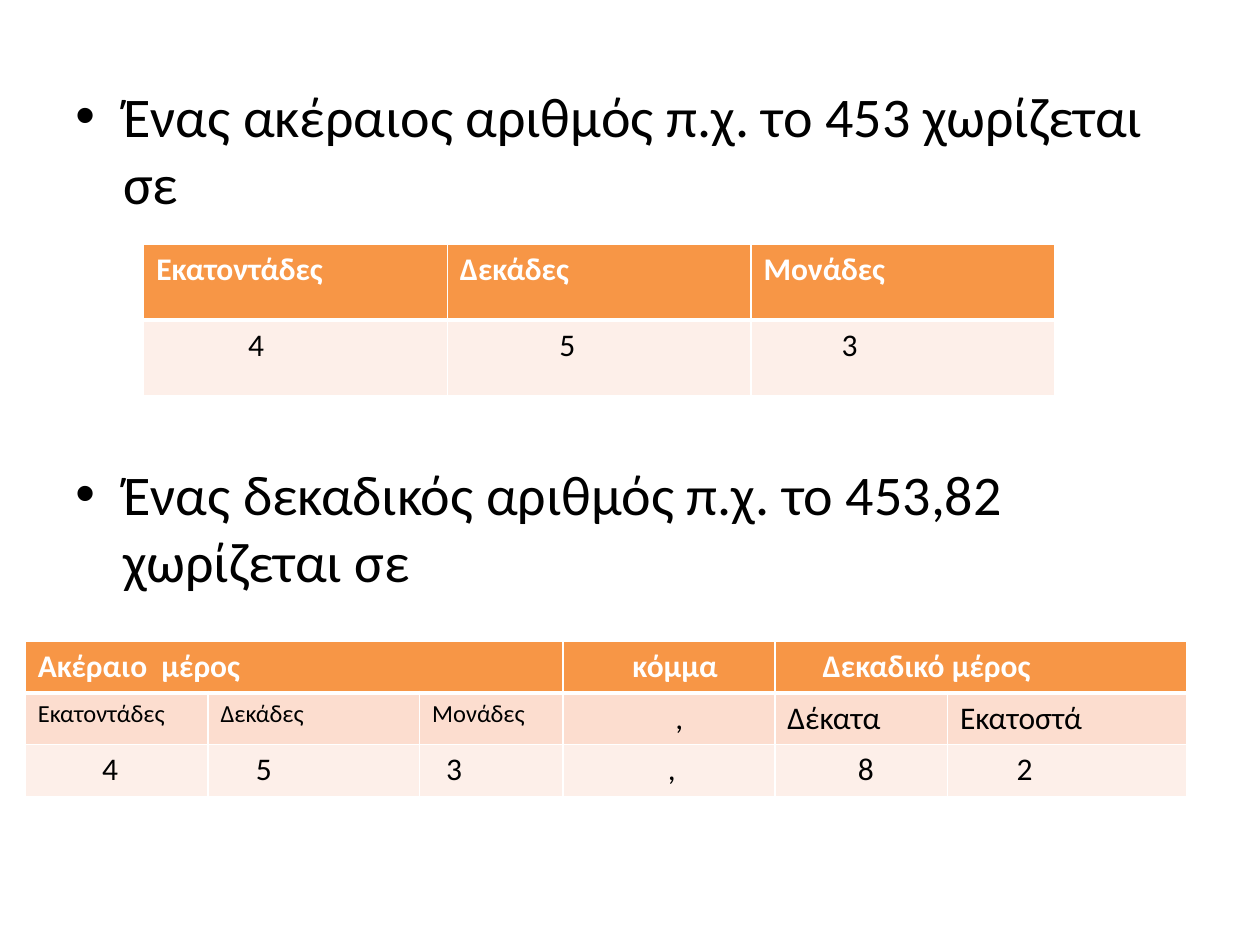
"""Build a slide that splits whole and decimal numbers into place values."""
import dataclasses

import pptx
import pptx.dml.color
import pptx.oxml
import pptx.oxml.ns
import pptx.util

Inches = pptx.util.Inches
Pt = pptx.util.Pt


@dataclasses.dataclass(frozen=True)
class Theme:
    font: str = "Calibri"
    black: str = "000000"
    white: str = "FFFFFF"
    header: str = "F79646"
    band: str = "FCDDCF"
    light: str = "FDEFE9"
    body: int = 32
    cell: int = 18
    small: int = 14
    line: int = 1
    heavy: int = 3


THEME = Theme()


def add_xml(parent, xml):
    ns = pptx.oxml.ns.nsdecls("a")
    parent.append(pptx.oxml.parse_xml(xml.replace(" ", f" {ns} ", 1)))


def style_runs(p, size, color, bold=False):
    for r in p.runs:
        r.font.name = THEME.font
        r.font.size = Pt(size)
        r.font.bold = bold
        r.font.color.rgb = pptx.dml.color.RGBColor.from_string(color)


def add_bullets(s, left, top, width, height, items):
    sp = s.shapes.add_textbox(Inches(left), Inches(top), Inches(width), Inches(height))
    tf = sp.text_frame
    tf.word_wrap = True
    tf.text = "\n".join(text for text, _ in items)
    for p, (_, space) in zip(tf.paragraphs, items):
        p.space_before = Pt(space)
        pPr = p._p.get_or_add_pPr()
        pPr.set("marL", str(Inches(0.38)))
        pPr.set("indent", str(-Inches(0.38)))
        add_xml(pPr, '<a:buFont typeface="Arial"/>')
        add_xml(pPr, '<a:buChar char="•"/>')
        style_runs(p, THEME.body, THEME.black)


def set_borders(cell, top, bottom):
    tcPr = cell._tc.get_or_add_tcPr()
    sides = {"L": THEME.line, "R": THEME.line, "T": top, "B": bottom}
    for side, width in sides.items():
        add_xml(tcPr, f'<a:ln{side} w="{Pt(width)}"><a:solidFill>'
                      f'<a:srgbClr val="{THEME.white}"/></a:solidFill></a:ln{side}>')


def fill_cell(cell, row, fill, text, indent=0, size=THEME.cell):
    set_borders(cell, THEME.heavy if row == 1 else THEME.line,
                THEME.heavy if row == 0 else THEME.line)
    cell.fill.solid()
    cell.fill.fore_color.rgb = pptx.dml.color.RGBColor.from_string(fill)
    p = cell.text_frame.paragraphs[0]
    p.text = text
    p._p.get_or_add_pPr().set("marL", str(Inches(indent)))
    style_runs(p, size, THEME.black if row else THEME.white, row == 0)


def add_grid(s, left, top, widths, row_height, fills, rows, merges=()):
    table = s.shapes.add_table(len(rows), len(widths), Inches(left), Inches(top),
                               Inches(sum(widths)), Inches(row_height * len(rows))).table
    for col, width in zip(table.columns, widths):
        col.width = Inches(width)
    for i, (fill, row) in enumerate(zip(fills, rows)):
        table.rows[i].height = Inches(row_height)
        for j, content in enumerate(row):
            fill_cell(table.cell(i, j), i, fill, *content)
    for first, last in merges:
        table.cell(0, first).merge(table.cell(0, last))


def main():
    prs = pptx.Presentation()
    prs.slide_width, prs.slide_height = Inches(10), Inches(7.5)
    s = prs.slides.add_slide(prs.slide_layouts[6])
    add_bullets(s, 0.5, 0.6, 9, 6.1, [
        ("Ένας ακέραιος αριθμός π.χ. το 453 χωρίζεται σε", 6),
        ("Ένας δεκαδικός αριθμός π.χ. το 453,82 χωρίζεται σε", 139),
    ])
    places = ["Εκατοντάδες", "Δεκάδες", "Μονάδες"]
    add_grid(s, 1.14, 1.94, [2.41] * 3, 0.6, [THEME.header, THEME.light], [
        [(place,) for place in places],
        [("4", 0.73), ("5", 0.79), ("3", 0.62)],
    ])
    add_grid(s, 0.2, 5.09, [1.45, 1.68, 1.14, 1.68, 1.37, 1.9], 0.41,
             [THEME.header, THEME.band, THEME.light], [
        [("Ακέραιο  μέρος",), ("",), ("",), ("κόμμα", 0.45), ("Δεκαδικό μέρος", 0.28), ("",)],
        [(place, 0, THEME.small) for place in places]
        + [(",", 0.79), ("Δέκατα",), ("Εκατοστά",)],
        [("4", 0.51), ("5", 0.28), ("3", 0.11), (",", 0.73), ("8", 0.56), ("2", 0.45)],
    ], merges=[(0, 2), (4, 5)])
    prs.save("out.pptx")


if __name__ == "__main__":
    main()
